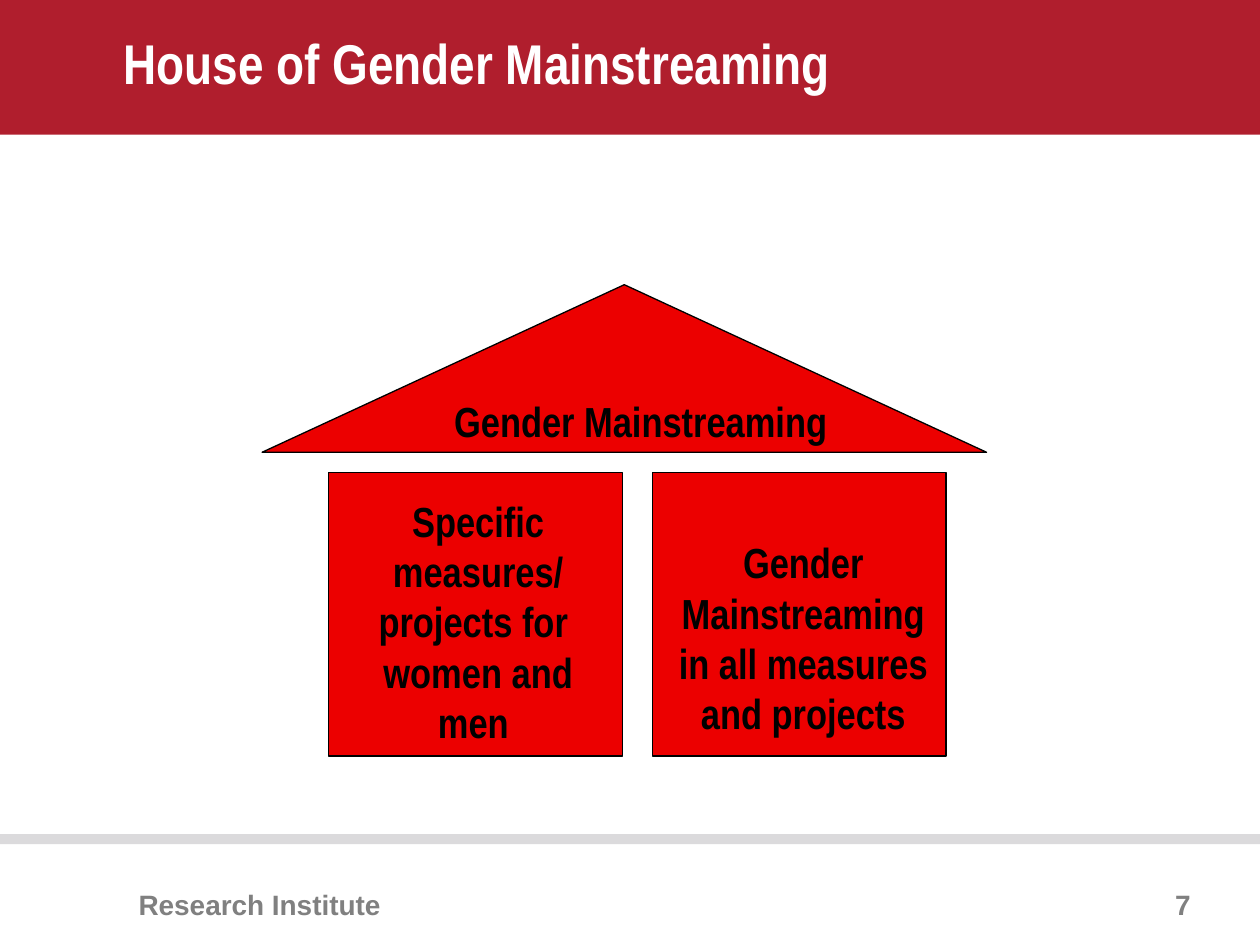
from pptx import Presentation
from pptx.dml.color import RGBColor as Rgb
from pptx.enum.shapes import MSO_SHAPE as Shape
from pptx.enum.text import MSO_ANCHOR as Anchor, PP_ALIGN as Align
from pptx.util import Inches, Pt


def color(code):
    return Rgb.from_string(code)


class Deck:
    head = {"name": "Arial Narrow", "size": Pt(32), "bold": True}
    label = {"name": "Arial Narrow", "size": Pt(24), "bold": True}
    foot = {"name": "Arial", "size": Pt(16), "bold": True}

    def __init__(self):
        self.prs = Presentation()
        self.prs.slide_width = Inches(10)
        self.prs.slide_height = Inches(7.5)
        self.slide = self.prs.slides.add_slide(self.prs.slide_layouts[6])

    def block(self, kind, area, fill, edge=None):
        shape = self.slide.shapes.add_shape(kind, *map(Inches, area))
        shape.shadow.inherit = False
        shape.fill.solid()
        shape.fill.fore_color.rgb = color(fill)
        if edge:
            shape.line.color.rgb = color(edge)
            shape.line.width = Pt(0.75)
        else:
            shape.line.fill.background()

    def text(self, words, area, style, ink, align=Align.LEFT,
             anchor=Anchor.TOP, pad=(0, 0)):
        box = self.slide.shapes.add_textbox(*map(Inches, area))
        frame = box.text_frame
        side, top = map(Inches, pad)
        form = {"word_wrap": True, "vertical_anchor": anchor,
                "margin_left": side, "margin_right": side,
                "margin_top": top, "margin_bottom": top}
        for key, value in form.items():
            setattr(frame, key, value)
        para = frame.paragraphs[0]
        para.text = words
        para.alignment = align
        for run in para.runs:
            for key, value in style.items():
                setattr(run.font, key, value)
            run.font.color.rgb = color(ink)

    def note(self, words, area):
        self.text(words, area, self.label, "000000", Align.CENTER,
                  pad=(0.1, 0.05))


def main():
    deck = Deck()
    red, black, gray = "EC0000", "000000", "808080"

    deck.block(Shape.RECTANGLE, (0, 6.62, 10, 0.08), "DBDADC")
    deck.block(Shape.RECTANGLE, (0, 0, 10, 1.07), "B01E2D")
    deck.text("Research Institute", (1.1, 6.98, 2.44, 0.33), deck.foot, gray,
              anchor=Anchor.BOTTOM)
    deck.text("7", (8.78, 7.02, 0.67, 0.29), deck.foot, gray, Align.RIGHT,
              Anchor.BOTTOM)
    deck.text("House of Gender Mainstreaming", (0.98, 0.21, 8.54, 0.56),
              deck.head, "FFFFFF", anchor=Anchor.MIDDLE)

    deck.block(Shape.ISOSCELES_TRIANGLE, (2.08, 2.26, 5.75, 1.33), red, black)
    for left in (2.61, 5.18):
        deck.block(Shape.RECTANGLE, (left, 3.75, 2.33, 2.25), red, black)

    notes = [
        ("Specific measures/\nprojects for \nwomen and men ",
         (2.71, 3.88, 2.17, 2.12)),
        ("Gender Mainstreaming in all measures and projects",
         (5.25, 4.21, 2.25, 1.72)),
        ("Gender Mainstreaming", (3.17, 3.09, 3.83, 0.5)),
    ]
    for words, area in notes:
        deck.note(words, area)

    deck.prs.save("out.pptx")


if __name__ == "__main__":
    main()
